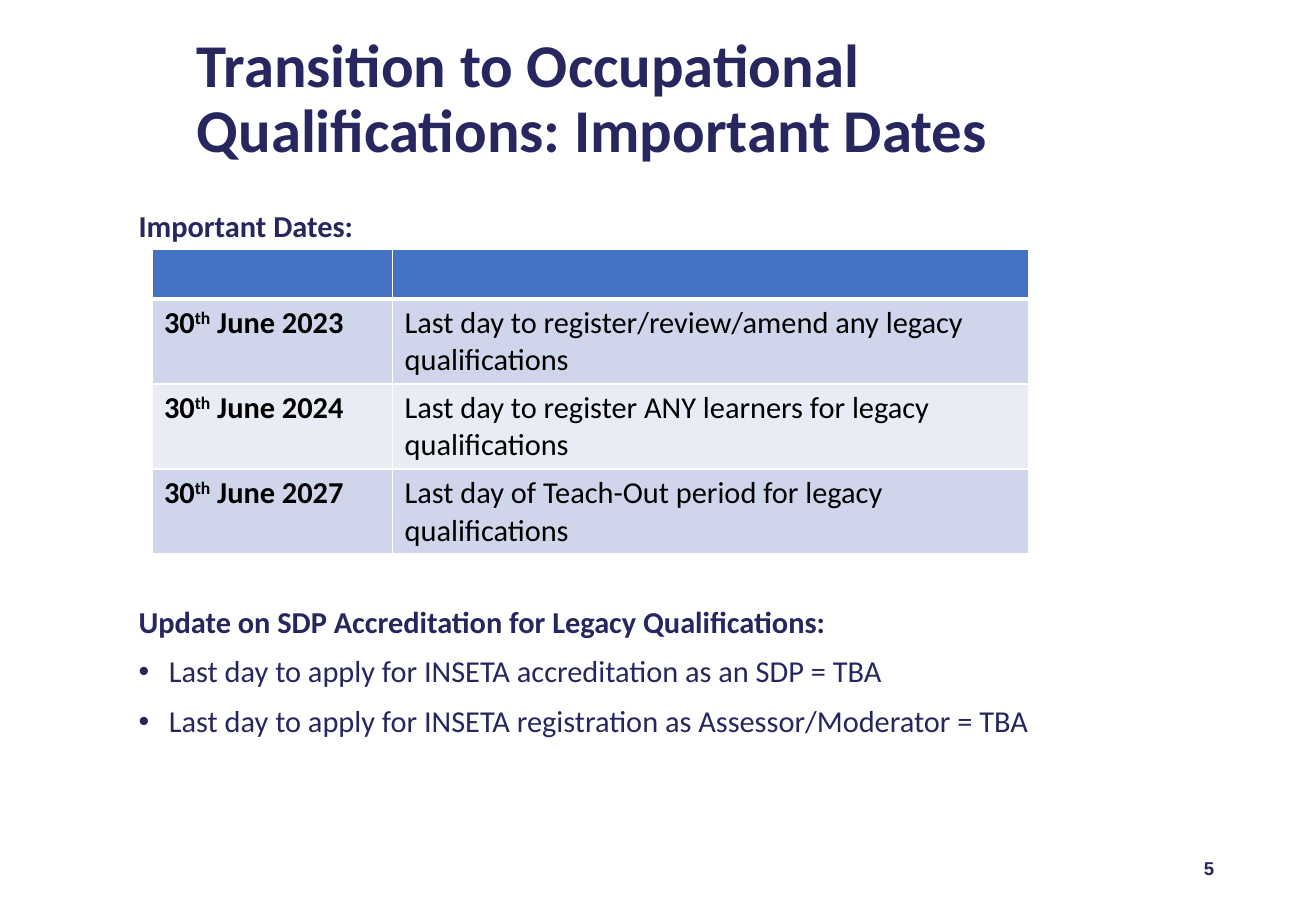
from dataclasses import dataclass

from lxml import etree
from pptx import Presentation
from pptx import util as u
from pptx.dml.color import RGBColor
from pptx.enum import text as t
from pptx.oxml import ns

TITLE = "Transition to Occupational Qualifications: Important Dates"
PAGE = "5"
# text, is bullet, space before in points (the gap leaves room for the table)
BODY = [
    ("Important Dates:", False, 0),
    ("Update on SDP Accreditation for Legacy Qualifications:", False, 215),
    ("Last day to apply for INSETA accreditation as an SDP = TBA", True, 10),
    ("Last day to apply for INSETA registration as Assessor/Moderator = TBA", True, 10),
]
DATES = [
    ("30", "th", " June 2023", "Last day to register/review/amend any legacy qualifications"),
    ("30", "th", " June 2024", "Last day to register ANY learners for legacy qualifications"),
    ("30", "th", " June 2027", "Last day of Teach-Out period for legacy qualifications"),
]

PX = 9144  # 100 px to the inch
SLIDE = (1083, 750)
TITLE_BOX = (152, 23, 857, 119)
BODY_BOX = (104, 169, 934, 476)
PAGE_BOX = (765, 695, 244, 40)
TABLE_AT = (125, 205)
COLS = (198, 524)
HEAD_H, ROW_H = 41, 70
INDENT = 25


@dataclass(frozen=True)
class Theme:
    font: str = "Calibri"
    page_font: str = "Arial"
    ink: str = "27265F"
    black: str = "000000"
    white: str = "FFFFFF"
    head: str = "4472C4"
    bands: tuple = ("CFD5EA", "E9EBF5")
    title: int = 36
    text: int = 18
    page: int = 11


THEME = Theme()


def px(*vals):
    return [u.Emu(v * PX) for v in vals]


def place(shape, box):
    shape.left, shape.top, shape.width, shape.height = px(*box)


def add_run(para, words, size=THEME.text, bold=False, color=THEME.ink, face=THEME.font):
    run = para.add_run()
    run.text = words
    font = run.font
    font.name, font.size, font.bold = face, u.Pt(size), bold
    font.color.rgb = RGBColor.from_string(color)
    return run


def set_bullet(para, on):
    props = para._p.get_or_add_pPr()
    pad = INDENT * PX if on else 0
    props.set("marL", str(pad))
    props.set("indent", str(-pad))
    if on:
        etree.SubElement(props, ns.qn("a:buFont")).set("typeface", "Arial")
        etree.SubElement(props, ns.qn("a:buChar")).set("char", "•")
    else:
        etree.SubElement(props, ns.qn("a:buNone"))


def style_cell(cell, color, low):
    """Add white borders, the bottom one low points wide, then the fill."""
    props = cell._tc.get_or_add_tcPr()
    for side, wide in (("L", 1), ("R", 1), ("T", 1), ("B", low)):
        line = etree.SubElement(props, ns.qn(f"a:ln{side}"), w=str(u.Pt(wide)))
        fill = etree.SubElement(line, ns.qn("a:solidFill"))
        etree.SubElement(fill, ns.qn("a:srgbClr"), val=THEME.white)
    cell.fill.solid()
    cell.fill.fore_color.rgb = RGBColor.from_string(color)


def add_title(slide):
    title = slide.shapes.title
    place(title, TITLE_BOX)
    frame = title.text_frame
    frame.auto_size = t.MSO_AUTO_SIZE.NONE
    frame.vertical_anchor = t.MSO_ANCHOR.MIDDLE
    para = frame.paragraphs[0]
    para.alignment = t.PP_ALIGN.LEFT
    para.line_spacing = 0.9
    add_run(para, TITLE, THEME.title, True)


def add_body(slide):
    body = slide.placeholders[1]
    place(body, BODY_BOX)
    frame = body.text_frame
    frame.auto_size = t.MSO_AUTO_SIZE.NONE
    for i, (words, point, gap) in enumerate(BODY):
        para = frame.add_paragraph() if i else frame.paragraphs[0]
        set_bullet(para, point)
        para.line_spacing = 0.9
        para.space_before = u.Pt(gap)
        add_run(para, words, bold=not point)


def add_dates(slide):
    size = sum(COLS), HEAD_H + ROW_H * len(DATES)
    table = slide.shapes.add_table(len(DATES) + 1, len(COLS), *px(*TABLE_AT, *size)).table
    for col, wide in zip(table.columns, px(*COLS)):
        col.width = wide
    for i, row in enumerate(table.rows):
        row.height = u.Emu((ROW_H if i else HEAD_H) * PX)
        for cell in row.cells:
            style_cell(cell, THEME.bands[(i - 1) % 2] if i else THEME.head, 1 if i else 3)
    for i, (day, mark, month, event) in enumerate(DATES, 1):
        para = table.cell(i, 0).text_frame.paragraphs[0]
        for part in (day, mark, month):
            run = add_run(para, part, bold=True, color=THEME.black)
            if part == mark:
                run._r.get_or_add_rPr().set("baseline", "30000")
        add_run(table.cell(i, 1).text_frame.paragraphs[0], event, color=THEME.black)


def add_page(slide):
    frame = slide.shapes.add_textbox(*px(*PAGE_BOX)).text_frame
    frame.word_wrap = True
    frame.vertical_anchor = t.MSO_ANCHOR.MIDDLE
    para = frame.paragraphs[0]
    para.alignment = t.PP_ALIGN.RIGHT
    add_run(para, PAGE, THEME.page, True, face=THEME.page_font)


def main():
    deck = Presentation()
    deck.slide_width, deck.slide_height = px(*SLIDE)
    slide = deck.slides.add_slide(deck.slide_layouts[1])
    add_title(slide)
    add_page(slide)
    add_body(slide)
    add_dates(slide)
    deck.save("out.pptx")


if __name__ == "__main__":
    main()
